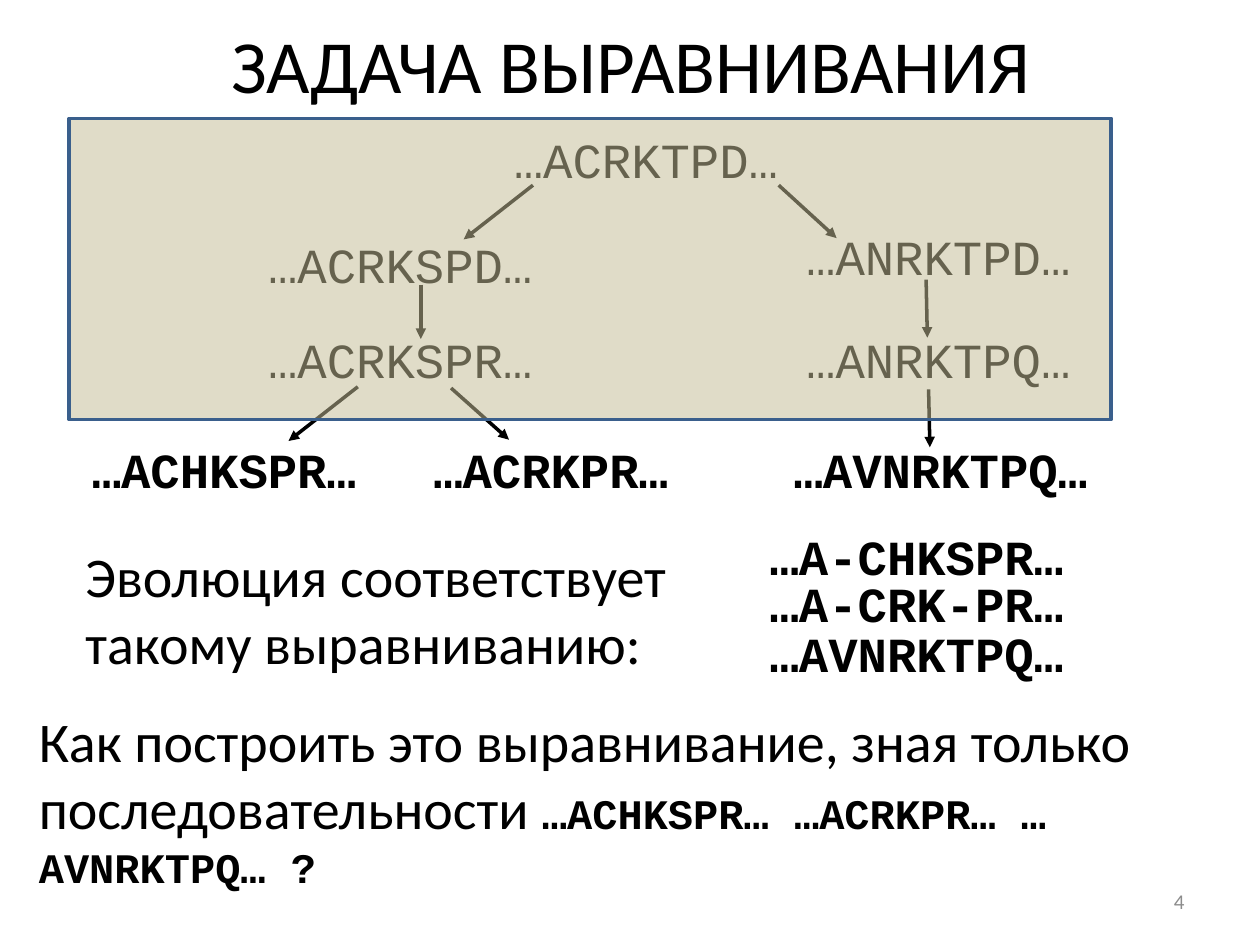
from lxml import etree
from pptx import Presentation, util as u
from pptx.dml.color import RGBColor
from pptx.enum import shapes, text
from pptx.oxml.ns import qn

BLACK = RGBColor(0x00, 0x00, 0x00)
GRAY = RGBColor(0x8C, 0x8C, 0x8C)
SAND = RGBColor(0xC4, 0xBD, 0x97)
BLUE = RGBColor(0x3A, 0x5F, 0x8C)
SANS, MONO = "Calibri", "Courier New"

# Sequences of the tree: left, top, width, letters, bold
TREE = [
    (3.98, 0.98, 2.32, "…ACRKTPD…", False),
    (2.03, 1.81, 2.32, "…ACRKSPD…", False),
    (2.03, 2.57, 2.32, "…ACRKSPR…", False),
    (0.63, 3.44, 2.32, "…ACHKSPR…", True),
    (3.34, 3.44, 2.08, "…ACRKPR…", True),
    (6.3, 1.75, 2.32, "…ANRKTPD…", False),
    (6.3, 2.57, 2.32, "…ANRKTPQ…", False),
    (6.2, 3.44, 2.55, "…AVNRKTPQ…", True),
]
# Arrows from parent to child: x1, y1, x2, y2
ARROWS = [
    (4.23, 1.47, 3.68, 1.9),
    (3.34, 2.26, 3.34, 2.69),
    (2.84, 3.07, 2.29, 3.5),
    (3.58, 3.08, 4.04, 3.49),
    (6.18, 1.47, 6.64, 1.89),
    (7.35, 2.22, 7.36, 2.68),
    (7.37, 3.09, 7.38, 3.55),
]
# Aligned sequences: top, letters
ROWS = [(4.13, "…A-CHKSPR…"), (4.5, "…A-CRK-PR…"), (4.9, "…AVNRKTPQ…")]


def add_run(para, words, size, font=SANS, bold=False, color=BLACK):
    run = para.add_run()
    run.text = words
    run.font.size = u.Pt(size)
    run.font.name = font
    run.font.bold = bold
    run.font.color.rgb = color


def add_box(slide, left, top, width, height, wrap=True):
    box = slide.shapes.add_textbox(*map(u.Inches, (left, top, width, height)))
    box.text_frame.word_wrap = wrap
    return box.text_frame


def add_seq(slide, left, top, width, letters, bold):
    frame = add_box(slide, left, top, width, 0.57, wrap=False)
    frame.auto_size = text.MSO_AUTO_SIZE.SHAPE_TO_FIT_TEXT
    add_run(frame.paragraphs[0], letters, 28, MONO, bold)


def add_arrow(slide, *ends):
    arrow = slide.shapes.add_connector(
        shapes.MSO_CONNECTOR.STRAIGHT, *map(u.Inches, ends))
    arrow.line.color.rgb = BLACK
    arrow.line.width = u.Pt(2)
    etree.SubElement(arrow.line._get_or_add_ln(), qn("a:tailEnd"),
                     type="triangle")
    etree.SubElement(arrow._element.spPr, qn("a:effectLst"))


def add_veil(slide, left, top, width, height):
    veil = slide.shapes.add_shape(
        shapes.MSO_SHAPE.RECTANGLE,
        *map(u.Inches, (left, top, width, height)))
    veil.shadow.inherit = False
    veil.fill.solid()
    veil.fill.fore_color.rgb = SAND
    tint = veil._element.spPr.find(".//" + qn("a:srgbClr"))
    etree.SubElement(tint, qn("a:alpha"), val="52000")
    veil.line.color.rgb = BLUE
    veil.line.width = u.Pt(2)


def main():
    deck = Presentation()
    deck.slide_width, deck.slide_height = u.Inches(10), u.Inches(7.5)
    slide = deck.slides.add_slide(deck.slide_layouts[6])

    # Slide number
    frame = add_box(slide, 7.17, 6.95, 2.33, 0.4)
    frame.vertical_anchor = text.MSO_ANCHOR.MIDDLE
    frame.paragraphs[0].alignment = text.PP_ALIGN.RIGHT
    add_run(frame.paragraphs[0], "4", 12, color=GRAY)

    # Evolution tree
    for seq in TREE:
        add_seq(slide, *seq)
    for ends in ARROWS:
        add_arrow(slide, *ends)

    # Alignment and its caption
    for top, letters in ROWS:
        add_seq(slide, 6.01, top, 2.55, letters, True)
    frame = add_box(slide, 0.58, 4.25, 5.39, 1.18)
    add_run(frame.paragraphs[0],
            "Эволюция соответствует такому выравниванию:", 32)

    # Title
    para = add_box(slide, 0.51, 0.18, 9, 0.81).paragraphs[0]
    para.alignment = text.PP_ALIGN.CENTER
    para.line_spacing = 0.9
    add_run(para, "ЗАДАЧА ВЫРАВНИВАНИЯ", 42.9)

    # Veil over the unknown ancestors
    add_veil(slide, 0.55, 0.94, 8.27, 2.39)

    # Question
    para = add_box(slide, 0.21, 5.56, 9.53, 1.58).paragraphs[0]
    add_run(para, "Как построить это выравнивание, зная только "
                  "последовательности ", 32)
    add_run(para, "…ACHKSPR… …ACRKPR… …AVNRKTPQ… ?", 24, MONO, True)

    deck.save("out.pptx")


if __name__ == "__main__":
    main()
